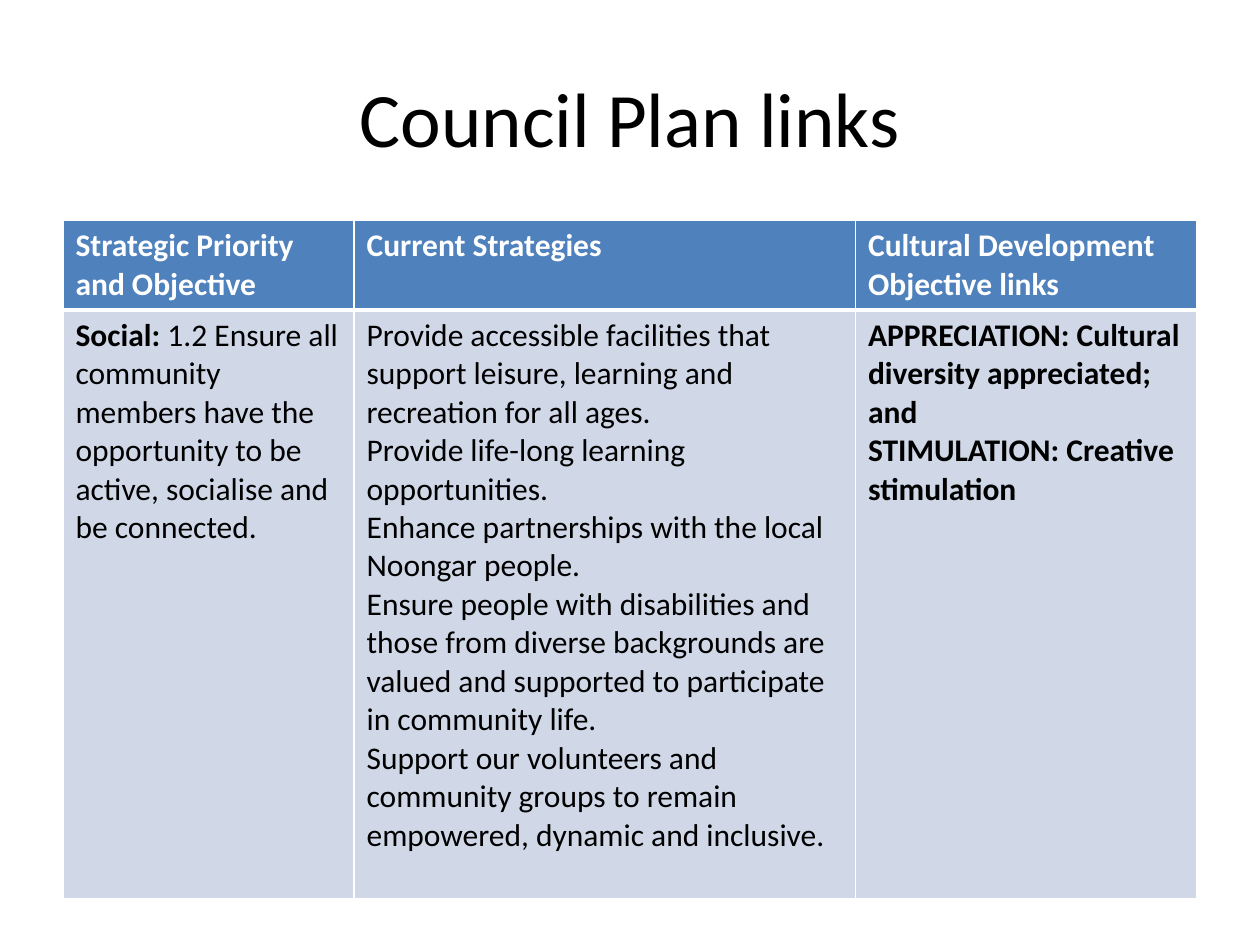
from typing import NamedTuple

from lxml.etree import SubElement
from pptx import Presentation
from pptx.dml.color import RGBColor
from pptx.enum.text import MSO_ANCHOR, PP_ALIGN
from pptx.oxml.ns import qn
from pptx.util import Inches, Pt

BLACK = RGBColor(0x00, 0x00, 0x00)
WHITE = RGBColor(0xFF, 0xFF, 0xFF)
BLUE = RGBColor(0x4F, 0x81, 0xBD)
PALE = RGBColor(0xD0, 0xD8, 0xE8)
FONT = "Calibri"


class Run(NamedTuple):
    text: str
    bold: bool = False


class Row(NamedTuple):
    height: float
    fill: RGBColor
    ink: RGBColor
    top: int
    base: int
    cells: list[list[list[Run]]]


WIDTHS = [2.31, 3.98, 2.71]
HEADS = [
    "Strategic Priority and Objective",
    "Current Strategies",
    "Cultural Development Objective links",
]
PLANS = [
    "Provide accessible facilities that support leisure, learning and recreation for all ages.",
    "Provide life-long learning opportunities.",
    "Enhance partnerships with the local Noongar people.",
    "Ensure people with disabilities and those from diverse backgrounds are valued "
    "and supported to participate in community life.",
    "Support our volunteers and community groups to remain empowered, dynamic and inclusive.",
]
GOAL = [
    Run("Social: ", True),
    Run("1.2 Ensure all community members have the opportunity to be active, "
        "socialise and be connected."),
]
LINKS = [
    "APPRECIATION: Cultural diversity appreciated; and",
    "STIMULATION: Creative stimulation",
]
ROWS = [
    Row(0.71, BLUE, WHITE, 1, 3, [[[Run(head, True)]] for head in HEADS]),
    Row(4.67, PALE, BLACK, 3, 1, [
        [GOAL],
        [[Run(plan)] for plan in PLANS],
        [[Run(link, True)] for link in LINKS],
    ]),
]


def write(frame, paras: list[list[Run]], size: int, ink: RGBColor,
          align=PP_ALIGN.LEFT) -> None:
    frame.word_wrap = True
    for i, runs in enumerate(paras):
        para = frame.paragraphs[0] if i == 0 else frame.add_paragraph()
        para.alignment = align
        for item in runs:
            run = para.add_run()
            run.text = item.text
            run.font.name = FONT
            run.font.size = Pt(size)
            run.font.bold = item.bold
            run.font.color.rgb = ink


def edge(cell, top: int, base: int) -> None:
    props = cell._tc.get_or_add_tcPr()
    for side, width in {"L": 1, "R": 1, "T": top, "B": base}.items():
        line = SubElement(props, qn(f"a:ln{side}"), w=str(Pt(width)))
        fill = SubElement(line, qn("a:solidFill"))
        SubElement(fill, qn("a:srgbClr"), val=str(WHITE))


def add_title(slide, text: str) -> None:
    box = slide.shapes.add_textbox(Inches(0.5), Inches(0.3), Inches(9), Inches(1.25))
    write(box.text_frame, [[Run(text)]], 44, BLACK, PP_ALIGN.CENTER)
    box.text_frame.vertical_anchor = MSO_ANCHOR.MIDDLE


def add_grid(slide, rows: list[Row]) -> None:
    height = sum(row.height for row in rows)
    table = slide.shapes.add_table(
        len(rows), len(WIDTHS), Inches(0.5), Inches(1.75),
        Inches(sum(WIDTHS)), Inches(height)).table
    for col, width in zip(table.columns, WIDTHS):
        col.width = Inches(width)
    for i, row in enumerate(rows):
        table.rows[i].height = Inches(row.height)
        for j, paras in enumerate(row.cells):
            cell = table.cell(i, j)
            edge(cell, row.top, row.base)
            cell.fill.solid()
            cell.fill.fore_color.rgb = row.fill
            write(cell.text_frame, paras, 18, row.ink)


def main() -> None:
    deck = Presentation()
    deck.slide_width, deck.slide_height = Inches(10), Inches(7.5)
    slide = deck.slides.add_slide(deck.slide_layouts[6])
    add_title(slide, "Council Plan links")
    add_grid(slide, ROWS)
    deck.save("out.pptx")


if __name__ == "__main__":
    main()
